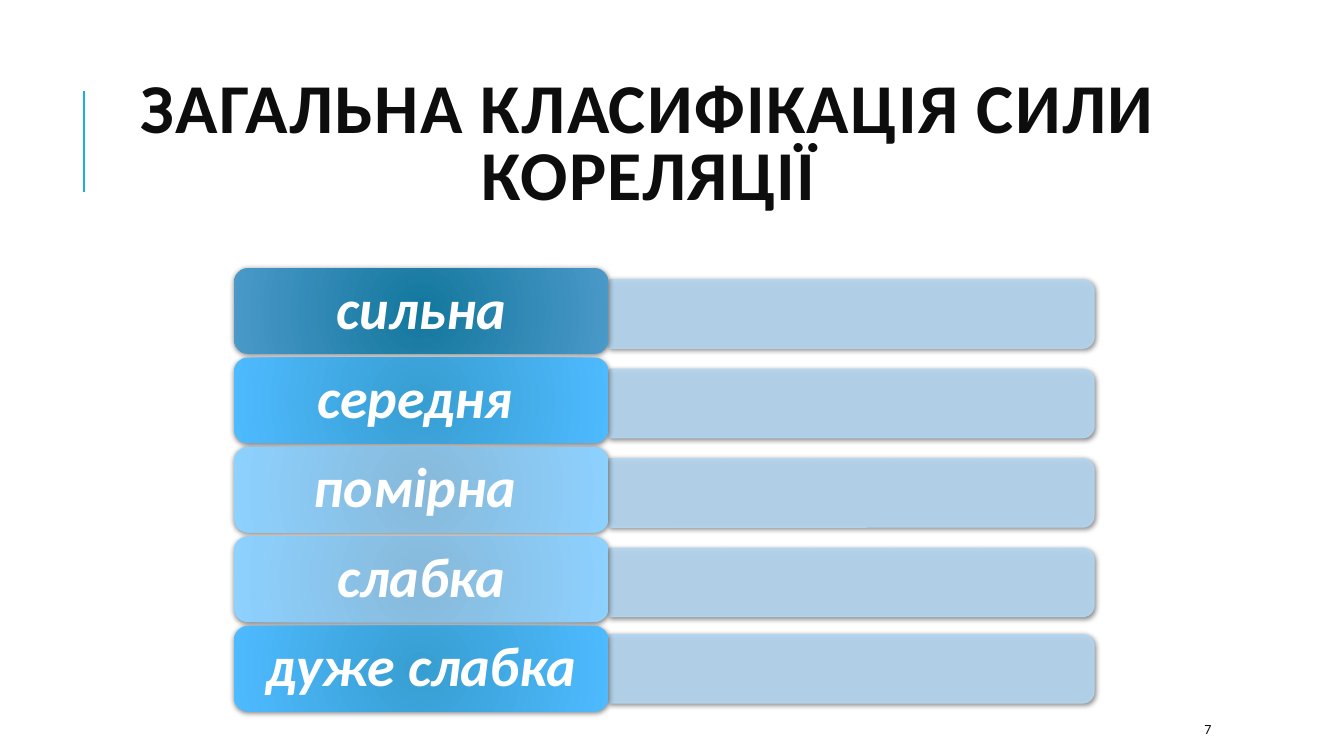
from pptx import Presentation
from pptx.dml.color import RGBColor
from pptx.enum.shapes import MSO_CONNECTOR as Connector, MSO_SHAPE as Shape
from pptx.enum.text import MSO_ANCHOR as Anchor, PP_ALIGN as Align
from pptx.oxml import parse_xml
from pptx.oxml.ns import nsdecls, qn
from pptx.oxml.xmlchemy import OxmlElement
from pptx.util import Pt

# Content: label, gradient name
TITLE = "ЗАГАЛЬНА КЛАСИФІКАЦІЯ СИЛИ КОРЕЛЯЦІЇ"
STRENGTHS = [
    ("сильна", "deep"),
    ("середня ", "bright"),
    ("помірна ", "pale"),
    ("слабка", "pale"),
    ("дуже слабка", "bright"),
]
PAGE = "7"

COLORS = {"accent": "1CADE4", "ink": "0D0D0D", "white": "FFFFFF", "bar": "B5D7F1",
          "deep_in": "13779D", "deep_out": "4A99C9",
          "bright_in": "379ED1", "bright_out": "4EBAFF",
          "pale_in": "87B9DA", "pale_out": "8DD1FF"}

# Layout in points
LABEL_LEFT, LABEL_TOP, LABEL_W, LABEL_H = 167, 191.5, 267.8, 61.2
ROW_PITCH = 63.9
BAR_LEFT, BAR_W, BAR_H = 435.2, 346.3, 49
BAR_DROP, LAST_BAR_DROP = 8.3, 6.1


def rgb(name):
    return RGBColor.from_string(COLORS[name])


def add_shadow(shape):
    shape._element.spPr.append(parse_xml(
        f'<a:effectLst {nsdecls("a")}>'
        '<a:outerShdw blurRad="50800" dist="12700" dir="5400000" rotWithShape="0">'
        '<a:srgbClr val="000000"><a:alpha val="50000"/></a:srgbClr>'
        '</a:outerShdw></a:effectLst>'))


def write(frame, text, size, color, align, spacing=1.0, bold=False, italic=False):
    frame.word_wrap = True
    frame.vertical_anchor = Anchor.MIDDLE
    frame.text = text
    paragraph = frame.paragraphs[0]
    paragraph.alignment = align
    paragraph.line_spacing = spacing
    run = paragraph.runs[0]
    run.font.name, run.font.size = "Calibri", Pt(size)
    run.font.bold, run.font.italic = bold, italic
    run.font.color.rgb = rgb(color)
    return run


def add_bar(slide, top):
    # A tall shape turned by 90 degrees about its centre
    left = BAR_LEFT + (BAR_W - BAR_H) / 2
    bar = slide.shapes.add_shape(Shape.ROUND_2_SAME_RECTANGLE, Pt(left),
                                 Pt(top - (BAR_W - BAR_H) / 2), Pt(BAR_H), Pt(BAR_W))
    bar.rotation = 90
    bar.fill.solid()
    bar.fill.fore_color.rgb = rgb("bar")
    bar.line.color.rgb = rgb("bar")
    bar.line.width = Pt(0.75)
    for color in bar._element.spPr.iter(qn("a:srgbClr")):
        alpha = OxmlElement("a:alpha")
        alpha.set("val", "90000")
        color.append(alpha)
    add_shadow(bar)


def add_label(slide, top, text, tone):
    label = slide.shapes.add_shape(Shape.ROUNDED_RECTANGLE, Pt(LABEL_LEFT), Pt(top),
                                   Pt(LABEL_W), Pt(LABEL_H))
    label.fill.gradient()
    for stop, part in zip(label.fill.gradient_stops, ("in", "out")):
        stop.color.rgb = rgb(f"{tone}_{part}")
    gradient = label._element.spPr.find(qn("a:gradFill"))
    gradient.replace(gradient.find(qn("a:lin")), parse_xml(
        f'<a:path {nsdecls("a")} path="circle">'
        '<a:fillToRect l="50000" t="50000" r="50000" b="50000"/></a:path>'))
    label.line.fill.background()
    add_shadow(label)
    frame = label.text_frame
    frame.margin_left = frame.margin_right = Pt(15)
    frame.margin_top = frame.margin_bottom = Pt(6)
    write(frame, text, 40, "white", Align.CENTER, 0.9, bold=True, italic=True)


def main():
    deck = Presentation()
    deck.slide_width, deck.slide_height = Pt(960), Pt(540)
    slide = deck.slides.add_slide(deck.slide_layouts[6])

    # Accent line and title
    accent = slide.shapes.add_connector(Connector.STRAIGHT, Pt(60), Pt(137), Pt(60), Pt(65))
    accent.line.color.rgb = rgb("accent")
    accent.line.width = Pt(1.5)
    accent._element.spPr.append(OxmlElement("a:effectLst"))
    title = slide.shapes.add_textbox(Pt(80.6), Pt(46), Pt(765.4), Pt(118))
    heading = write(title.text_frame, TITLE, 50, "ink", Align.CENTER, 0.8, bold=True)
    heading.font._element.set("spc", "100")

    # One bar and one label per strength
    for row, (text, tone) in enumerate(STRENGTHS):
        top = LABEL_TOP + row * ROW_PITCH
        is_last = row == len(STRENGTHS) - 1
        add_bar(slide, top + (LAST_BAR_DROP if is_last else BAR_DROP))
        add_label(slide, top, text, tone)

    # Page number
    page = slide.shapes.add_textbox(Pt(853.2), Pt(509.8), Pt(76.3), Pt(21.6))
    write(page.text_frame, PAGE, 10, "ink", Align.LEFT)

    deck.save("out.pptx")


if __name__ == "__main__":
    main()
